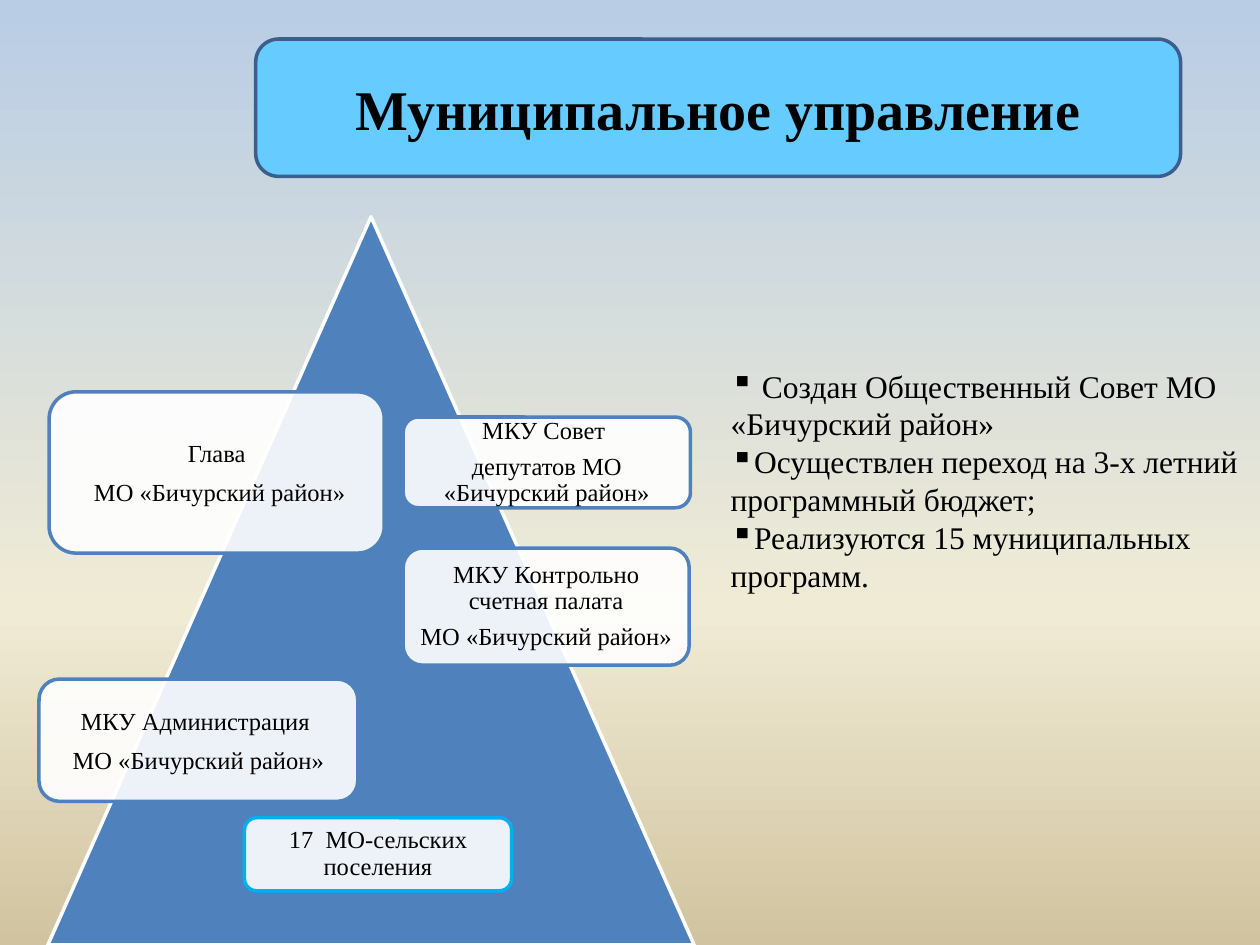
from copy import deepcopy

from lxml import etree
from pptx import Presentation
from pptx.dml.color import RGBColor
from pptx.enum.shapes import MSO_SHAPE
from pptx.enum.text import MSO_ANCHOR, PP_ALIGN
from pptx.oxml.ns import qn
from pptx.util import Inches, Pt

TRIANGLE = MSO_SHAPE.ISOSCELES_TRIANGLE
ROUNDED = MSO_SHAPE.ROUNDED_RECTANGLE
MIDDLE = MSO_ANCHOR.MIDDLE
CENTER = PP_ALIGN.CENTER

FONT = "Times New Roman"
BLACK = RGBColor(0x00, 0x00, 0x00)
WHITE = RGBColor(0xFF, 0xFF, 0xFF)
BLUE = RGBColor(0x4F, 0x81, 0xBD)
CYAN = RGBColor(0x00, 0xB0, 0xF0)
SKY = RGBColor(0x66, 0xCC, 0xFF)
NAVY = RGBColor(0x3A, 0x5F, 0x8C)
BACKGROUND_STOPS = [
    (0, RGBColor(0xB9, 0xCD, 0xE5)),
    (0.65, RGBColor(0xF0, 0xEB, 0xD5)),
    (1, RGBColor(0xD1, 0xC3, 0x9F)),
]

# Content: boxes are (left, top, width, height), outline, line spacing, paragraphs
TITLE = "Муниципальное управление"
BOXES = [
    ((3.2, 3.31, 2.28, 0.72), BLUE, 0.9,
     ["МКУ Совет ", "депутатов МО «Бичурский район»"]),
    ((3.2, 4.35, 2.27, 0.93), BLUE, 0.9,
     ["МКУ Контрольно счетная палата", "МО «Бичурский район»"]),
    ((0.39, 3.11, 2.66, 1.28), BLUE, 1.0,
     ["Глава", " МО «Бичурский район»"]),
    ((0.31, 5.39, 2.53, 0.97), BLUE, 1.0,
     ["МКУ Администрация ", "МО «Бичурский район»"]),
    ((1.94, 6.49, 2.12, 0.58), CYAN, 0.9,
     ["17  МО-сельских поселения"]),
]
RESULTS = [
    " Создан Общественный Совет МО «Бичурский район»",
    "Осуществлен переход на 3-х летний программный бюджет;",
    "Реализуются 15 муниципальных программ.",
]


def add_figure(slide, kind, place, fill, outline):
    shape = slide.shapes.add_shape(kind, *map(Inches, place))
    shape.shadow.inherit = False
    shape.fill.solid()
    shape.fill.fore_color.rgb = fill
    shape.line.color.rgb = outline
    shape.line.width = Pt(2)
    return shape


def write_paragraphs(frame, texts, size, bold=False):
    frame.word_wrap = True
    for index, text in enumerate(texts):
        paragraph = frame.add_paragraph() if index else frame.paragraphs[0]
        paragraph.text = text
        paragraph.font.name = FONT
        paragraph.font.size = Pt(size)
        paragraph.font.bold = bold
        paragraph.font.color.rgb = BLACK
    return frame.paragraphs


def set_opacity(shape, percent):
    color = shape.fill._xPr.find(qn("a:solidFill"))[0]
    etree.SubElement(color, qn("a:alpha"), val=str(percent * 1000))


def set_background(slide):
    fill = slide.background.fill
    fill.gradient()
    fill.gradient_angle = 270
    first_stop = next(slide._element.iter(qn("a:gs")))
    first_stop.addnext(deepcopy(first_stop))
    for stop, (position, color) in zip(fill.gradient_stops, BACKGROUND_STOPS):
        stop.position = position
        stop.color.rgb = color


presentation = Presentation()
presentation.slide_width = Inches(10)
presentation.slide_height = Inches(7.5)
slide = presentation.slides.add_slide(presentation.slide_layouts[6])
set_background(slide)

# Pyramid with its labelled boxes
add_figure(slide, TRIANGLE, (0.38, 1.72, 5.13, 5.78), BLUE, WHITE)
for place, outline, spacing, texts in BOXES:
    box = add_figure(slide, ROUNDED, place, WHITE, outline)
    set_opacity(box, 90)
    frame = box.text_frame
    frame.vertical_anchor = MIDDLE
    frame.margin_left = frame.margin_right = Inches(0.06)
    frame.margin_top = frame.margin_bottom = Inches(0.06)
    for paragraph in write_paragraphs(frame, texts, 14):
        paragraph.alignment = CENTER
        paragraph.line_spacing = spacing
        paragraph.space_after = Pt(5.5)

# Title banner
banner = add_figure(slide, ROUNDED, (2.03, 0.31, 7.34, 1.09), SKY, NAVY)
banner.text_frame.vertical_anchor = MIDDLE
write_paragraphs(banner.text_frame, [TITLE], 32, bold=True)[0].alignment = CENTER

# Bulleted results
results = slide.shapes.add_textbox(*map(Inches, (5.7, 2.86, 4.3, 1.92)))
for paragraph in write_paragraphs(results.text_frame, RESULTS, 18):
    bullet = etree.Element(qn("a:buChar"), char="▪")
    paragraph._p.get_or_add_pPr().insert(0, bullet)

presentation.save("out.pptx")
